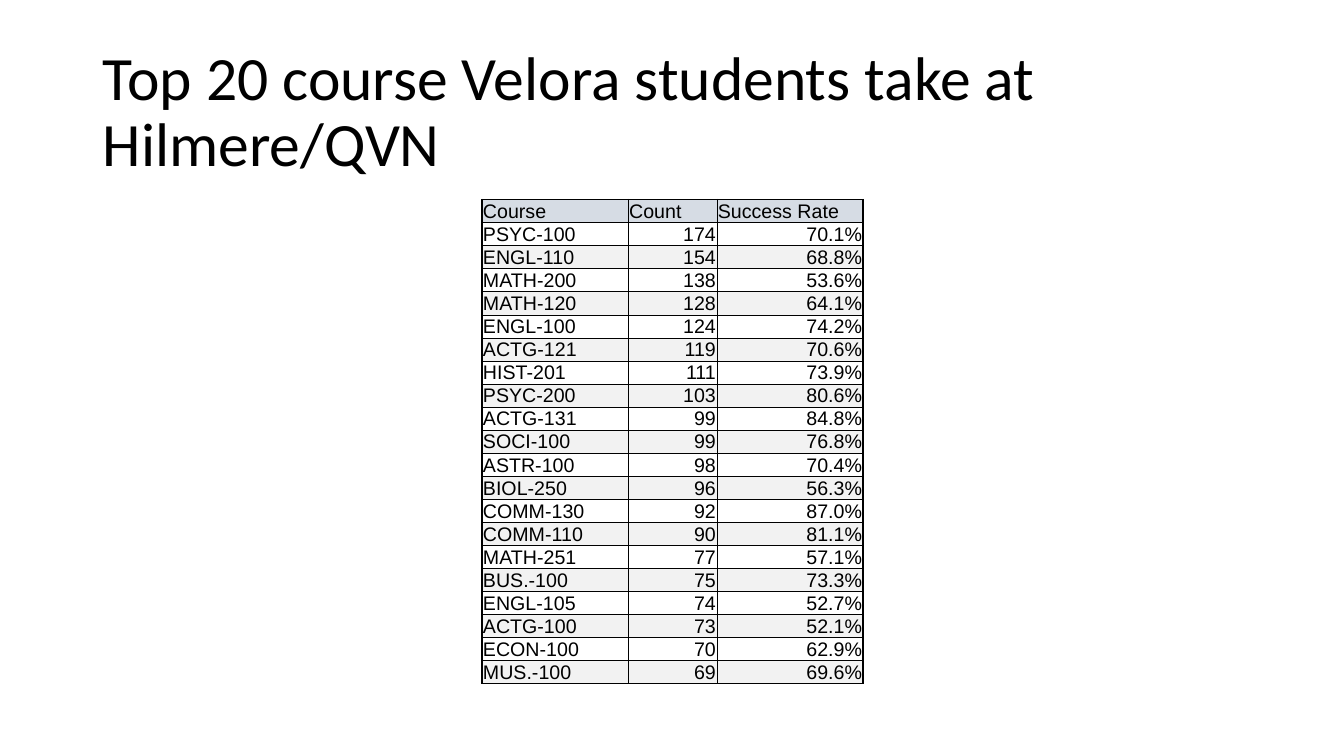
import pptx
import pptx.dml.color
import pptx.enum.text
import pptx.oxml.ns
import pptx.util
from lxml import etree

Inches = pptx.util.Inches
Pt = pptx.util.Pt
ALIGN = pptx.enum.text.PP_ALIGN
ANCHOR = pptx.enum.text.MSO_ANCHOR

BLACK = pptx.dml.color.RGBColor(0x00, 0x00, 0x00)
HEADER_FILL = pptx.dml.color.RGBColor(0xD6, 0xDC, 0xE4)
BAND_FILL = pptx.dml.color.RGBColor(0xF2, 0xF2, 0xF2)

THIN, THICK = 0.5, 1
TITLE = "Top 20 course Velora students take at Hilmere/QVN"
HEADINGS = ("Course", "Count", "Success Rate")
COURSES = [
    ("PSYC-100", 174, 70.1),
    ("ENGL-110", 154, 68.8),
    ("MATH-200", 138, 53.6),
    ("MATH-120", 128, 64.1),
    ("ENGL-100", 124, 74.2),
    ("ACTG-121", 119, 70.6),
    ("HIST-201", 111, 73.9),
    ("PSYC-200", 103, 80.6),
    ("ACTG-131", 99, 84.8),
    ("SOCI-100", 99, 76.8),
    ("ASTR-100", 98, 70.4),
    ("BIOL-250", 96, 56.3),
    ("COMM-130", 92, 87.0),
    ("COMM-110", 90, 81.1),
    ("MATH-251", 77, 57.1),
    ("BUS.-100", 75, 73.3),
    ("ENGL-105", 74, 52.7),
    ("ACTG-100", 73, 52.1),
    ("ECON-100", 70, 62.9),
    ("MUS.-100", 69, 69.6),
]
COLUMN_WIDTHS = (1.45, 0.88, 1.45)
ROW_HEIGHT = 0.19

TITLE_BOX = {"left": Inches(0.92), "top": Inches(0.4),
             "width": Inches(11.5), "height": Inches(1.45)}
CELL_FORMAT = {"margin_left": Inches(0.01), "margin_top": Inches(0.01),
               "margin_right": Inches(0.01), "margin_bottom": 0,
               "vertical_anchor": ANCHOR.BOTTOM}
TITLE_FONT = {"name": "Calibri", "size": Pt(44)}
CELL_FONT = {"name": "Arial", "size": Pt(14)}


def set_all(target, values):
    for name, value in values.items():
        setattr(target, name, value)


def write(para, text, font, align):
    span = para.add_run()
    span.text = text
    set_all(span.font, font)
    span.font.color.rgb = BLACK
    para.alignment = align


def add_title(page):
    box = page.shapes.title
    set_all(box, TITLE_BOX)
    set_all(box.text_frame, {"vertical_anchor": ANCHOR.MIDDLE, "word_wrap": True})
    para = box.text_frame.paragraphs[0]
    para.line_spacing = 0.9
    write(para, TITLE, TITLE_FONT, ALIGN.LEFT)


def set_borders(cell, widths):
    properties = cell._tc.get_or_add_tcPr()
    qn = pptx.oxml.ns.qn
    for side, width in widths.items():
        line = etree.SubElement(properties, qn(f"a:ln{side}"), w=str(Pt(width)))
        fill = etree.SubElement(line, qn("a:solidFill"))
        etree.SubElement(fill, qn("a:srgbClr"), val=str(BLACK))


def set_fill(cell, row):
    if row % 2:
        cell.fill.background()
    else:
        cell.fill.solid()
        cell.fill.fore_color.rgb = BAND_FILL if row else HEADER_FILL


def add_course_table(page):
    rows = [HEADINGS] + [(course, str(count), f"{rate:.1f}%")
                         for course, count, rate in COURSES]
    last_row, last_column = len(rows) - 1, len(HEADINGS) - 1
    frame = page.shapes.add_table(len(rows), len(HEADINGS), Inches(4.78), Inches(1.98),
                                  Inches(sum(COLUMN_WIDTHS)), Inches(5.12))
    table = frame.table
    set_all(table, {"first_row": False, "horz_banding": False})
    for column, width in zip(table.columns, COLUMN_WIDTHS):
        column.width = Inches(width)

    for r, texts in enumerate(rows):
        table.rows[r].height = Inches(ROW_HEIGHT)
        for c, text in enumerate(texts):
            cell = table.cell(r, c)
            set_all(cell, CELL_FORMAT)
            # Thick outer frame, thin inner grid
            set_borders(cell, {"L": THICK if c == 0 else THIN,
                               "R": THICK if c == last_column else THIN,
                               "T": THICK if r == 0 else THIN,
                               "B": THICK if r == last_row else THIN})
            set_fill(cell, r)
            align = ALIGN.RIGHT if r and c else ALIGN.LEFT
            write(cell.text_frame.paragraphs[0], text, CELL_FONT, align)
    # Row heights reset the frame, so its height is set last
    frame.height = Inches(5.12)


def main():
    deck = pptx.Presentation()
    set_all(deck, {"slide_width": Inches(13.33), "slide_height": Inches(7.5)})
    page = deck.slides.add_slide(deck.slide_layouts.get_by_name("Title Only"))
    add_title(page)
    add_course_table(page)
    deck.save("out.pptx")


if __name__ == "__main__":
    main()
